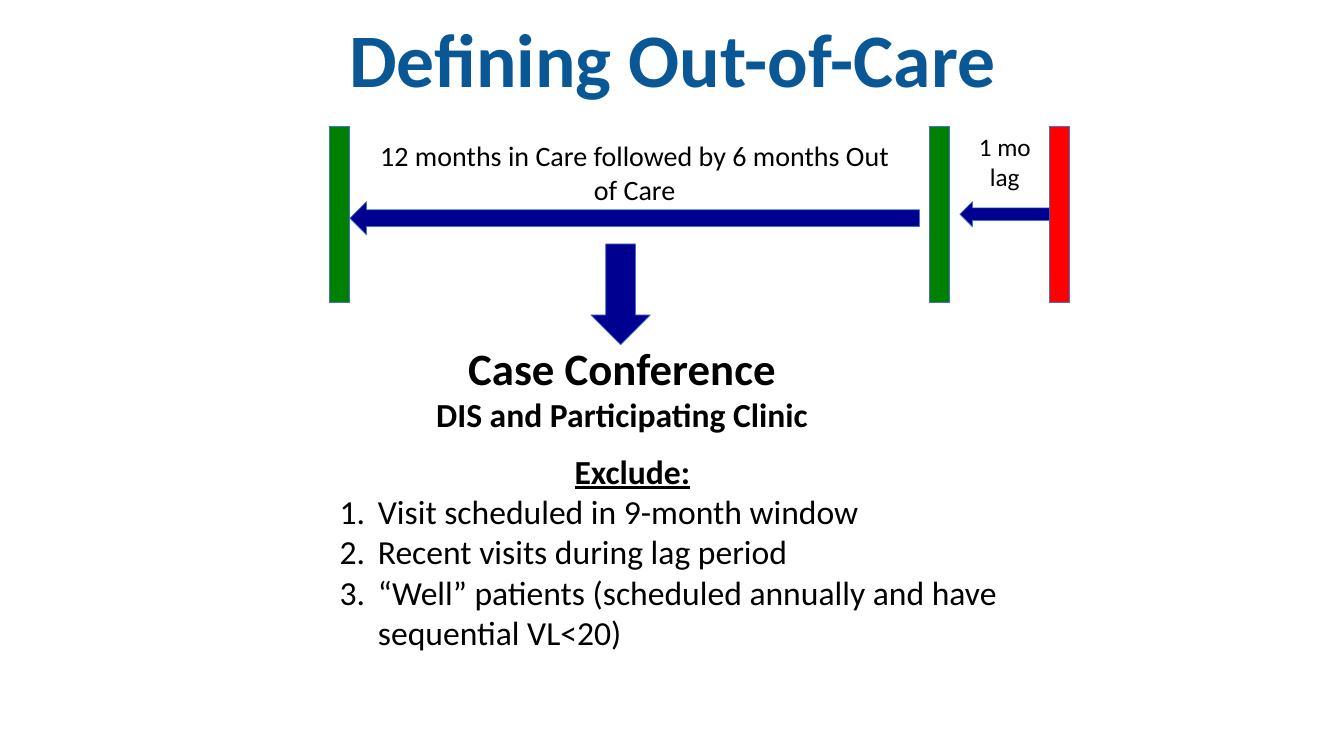
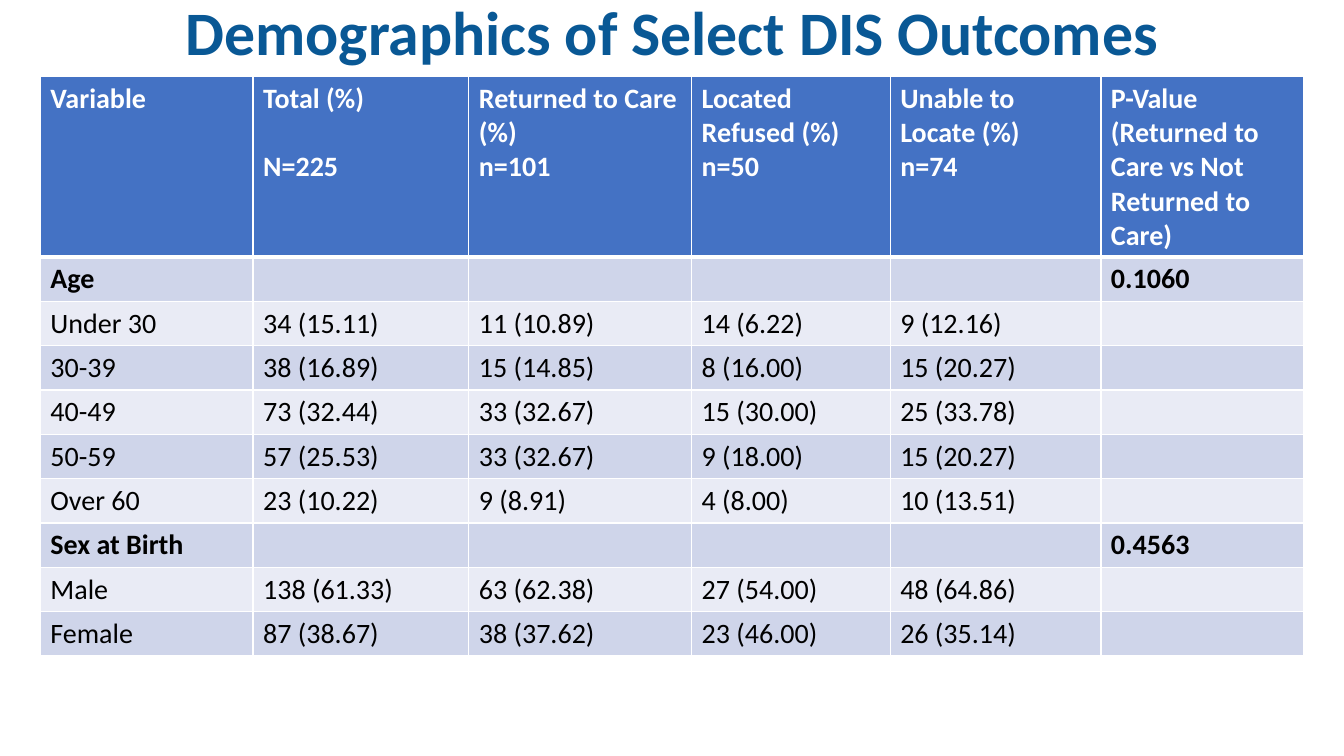
from lxml.etree import SubElement as Sub
from pptx import Presentation
from pptx.dml.color import RGBColor
from pptx.enum.shapes import MSO_SHAPE as Kind
from pptx.enum.text import MSO_ANCHOR as Anchor, PP_ALIGN as Align
from pptx.oxml.ns import qn
from pptx.util import Inches, Pt

# Shared style
FONT = "Calibri"
TITLE, BLUE, NAVY = "095895", "4472C4", "000090"
GREEN, RED, BLACK, WHITE = "008000", "FF0000", "000000", "FFFFFF"
BANDS = ("CFD5EA", "E9EBF5")


def color(text):
    return RGBColor.from_string(text)


class Deck:
    def __init__(self):
        self.prs = Presentation()
        self.prs.slide_width, self.prs.slide_height = Inches(13.33), Inches(7.5)
        self.slide = None

    def page(self):
        self.slide = self.prs.slides.add_slide(self.prs.slide_layouts[6])

    def style(self, para, size, bold=False, ink=BLACK, under=False):
        for run in para.runs:
            font = run.font
            font.name, font.size, font.bold = FONT, Pt(size), bold
            font.color.rgb = color(ink)
            if under:
                font.underline = True

    def text(self, area, lines, size, align=Align.CENTER, **look):
        box = self.slide.shapes.add_textbox(*map(Inches, area))
        frame = box.text_frame
        frame.word_wrap = True
        frame.text = "\n".join(lines)
        for para in frame.paragraphs:
            para.alignment = align
            self.style(para, size, **look)
        return frame

    def title(self, area, words, size):
        frame = self.text(area, [words], size, bold=True, ink=TITLE)
        frame.vertical_anchor = Anchor.MIDDLE
        frame.margin_top = frame.margin_bottom = 0
        frame.paragraphs[0].line_spacing = 0.9

    def shape(self, kind, area, fill):
        item = self.slide.shapes.add_shape(kind, *map(Inches, area))
        item.shadow.inherit = False
        item.fill.solid()
        item.fill.fore_color.rgb = color(fill)
        item.line.color.rgb = color(BLUE)
        item.line.width = Pt(0.5)

    def indent(self, para, left, first=0, number=False):
        props = para._p.get_or_add_pPr()
        props.set("marL", str(Inches(left)))
        props.set("indent", str(Inches(first)))
        if number:
            Sub(props, qn("a:buFont"), typeface="+mj-lt")
            Sub(props, qn("a:buAutoNum"), type="arabicPeriod")

    def cell(self, cell, words, fill, ink, bold, base):
        props = cell._tc.get_or_add_tcPr()
        for side in "LRTB":
            width = base if side == "B" else 1
            line = Sub(props, qn("a:ln" + side), w=str(Pt(width)))
            Sub(Sub(line, qn("a:solidFill")), qn("a:srgbClr"), val=WHITE)
        cell.fill.solid()
        cell.fill.fore_color.rgb = color(fill)
        cell.text_frame.text = words
        for para in cell.text_frame.paragraphs:
            self.style(para, 20, bold, ink)

    def table(self, left, top, widths, heads, rows, tall, low):
        data = [heads] + rows
        area = (left, top, sum(widths), tall + low * len(rows))
        grid = self.slide.shapes.add_table(
            len(data), len(widths), *map(Inches, area)).table
        for col, width in zip(grid.columns, widths):
            col.width = Inches(width)
        for i, row in enumerate(data):
            head = i == 0
            grid.rows[i].height = Inches(tall if head else low)
            fill = BLUE if head else BANDS[(i - 1) % 2]
            bold = head or not row[1]
            for j, words in enumerate(row):
                self.cell(grid.cell(i, j), words, fill,
                          WHITE if head else BLACK, bold, 3 if head else 1)
        return grid


def care(deck):
    deck.page()
    deck.title((2.17, 0, 9, 1.25), "Defining Out-of-Care", 54)

    # Timeline: bars, arrows and labels
    for left, fill in ((10.41, RED), (9.22, GREEN), (3.27, GREEN)):
        deck.shape(Kind.RECTANGLE, (left, 1.25, 0.2, 1.75), fill)
    deck.shape(Kind.LEFT_ARROW, (9.52, 2, 0.89, 0.25), NAVY)
    deck.shape(Kind.LEFT_ARROW, (3.47, 2, 5.65, 0.33), NAVY)
    deck.text((9.42, 1.25, 1.09, 0.71), ["1 mo", "lag"], 18)
    deck.text((3.67, 1.33, 5.25, 0.77),
              ["12 months in Care followed by 6 months Out of Care"], 20)

    # Conference
    deck.shape(Kind.DOWN_ARROW, (5.86, 2.42, 0.59, 1), NAVY)
    frame = deck.text((3.92, 3.33, 4.5, 1.04),
                      ["Case Conference", "DIS and Participating Clinic"],
                      24, bold=True)
    deck.style(frame.paragraphs[0], 32, bold=True)

    # Exclusions
    frame = deck.text((3.27, 4.42, 7.33, 2.12), [
        "Exclude:",
        "Visit scheduled in 9-month window",
        "Recent visits during lag period",
        "“Well” patients (scheduled annually and have sequential VL<20)",
    ], 24, Align.LEFT)
    head, *rules = frame.paragraphs
    deck.style(head, 24, bold=True, under=True)
    deck.indent(head, 2.33)
    for para in rules:
        deck.indent(para, 0.38, -0.38, number=True)


def people(deck):
    deck.page()
    deck.title((0.92, 0, 11.5, 0.7), "Demographics of Select DIS Outcomes", 44.1)

    # Outcome table
    heads = ["Variable", "Total (%)\nN=225", "Returned to Care (%)\nn=101",
             "Located Refused (%)\nn=50", "Unable to Locate (%)\nn=74",
             "P-Value (Returned to Care vs Not Returned to Care)"]
    rows = [
        ["Age", "", "", "", "", "0.1060"],
        ["Under 30", "34 (15.11)", "11 (10.89)", "14 (6.22)", "9 (12.16)", ""],
        ["30-39", "38 (16.89)", "15 (14.85)", "8 (16.00)", "15 (20.27)", ""],
        ["40-49", "73 (32.44)", "33 (32.67)", "15 (30.00)", "25 (33.78)", ""],
        ["50-59", "57 (25.53)", "33 (32.67)", "9 (18.00)", "15 (20.27)", ""],
        ["Over 60", "23 (10.22)", "9 (8.91)", "4 (8.00)", "10 (13.51)", ""],
        ["Sex at Birth", "", "", "", "", "0.4563"],
        ["Male", "138 (61.33)", "63 (62.38)", "27 (54.00)", "48 (64.86)", ""],
        ["Female", "87 (38.67)", "38 (37.62)", "23 (46.00)", "26 (35.14)", ""],
    ]
    widths = (2.11, 2.14, 2.21, 1.97, 2.09, 2.01)
    grid = deck.table(0.4, 0.76, widths, heads, rows, 1.79, 0.44)
    grid.cell(0, 1).text_frame.paragraphs[1].space_before = Pt(24.4)


def main():
    deck = Deck()
    care(deck)
    people(deck)
    deck.prs.save("out.pptx")


if __name__ == "__main__":
    main()
